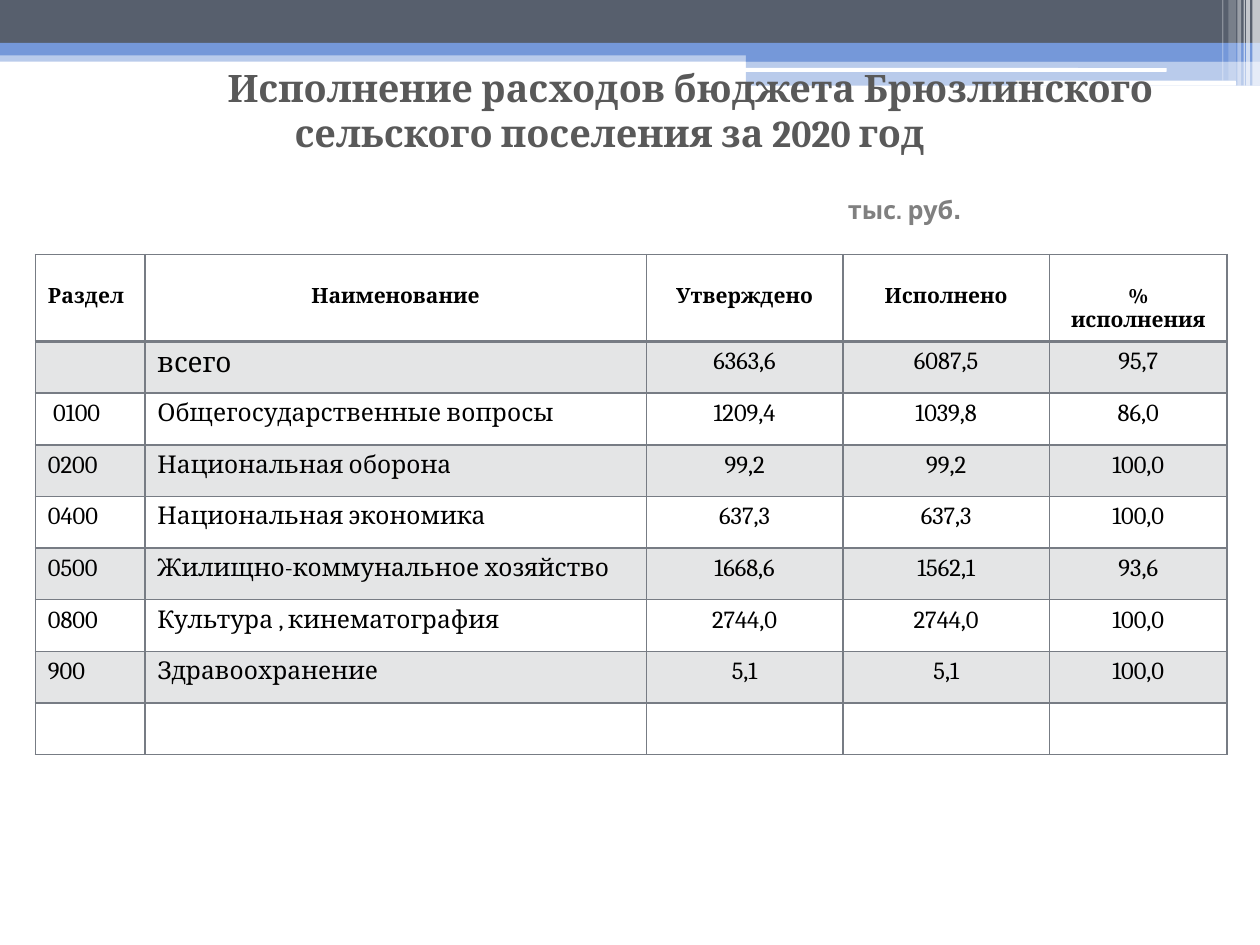
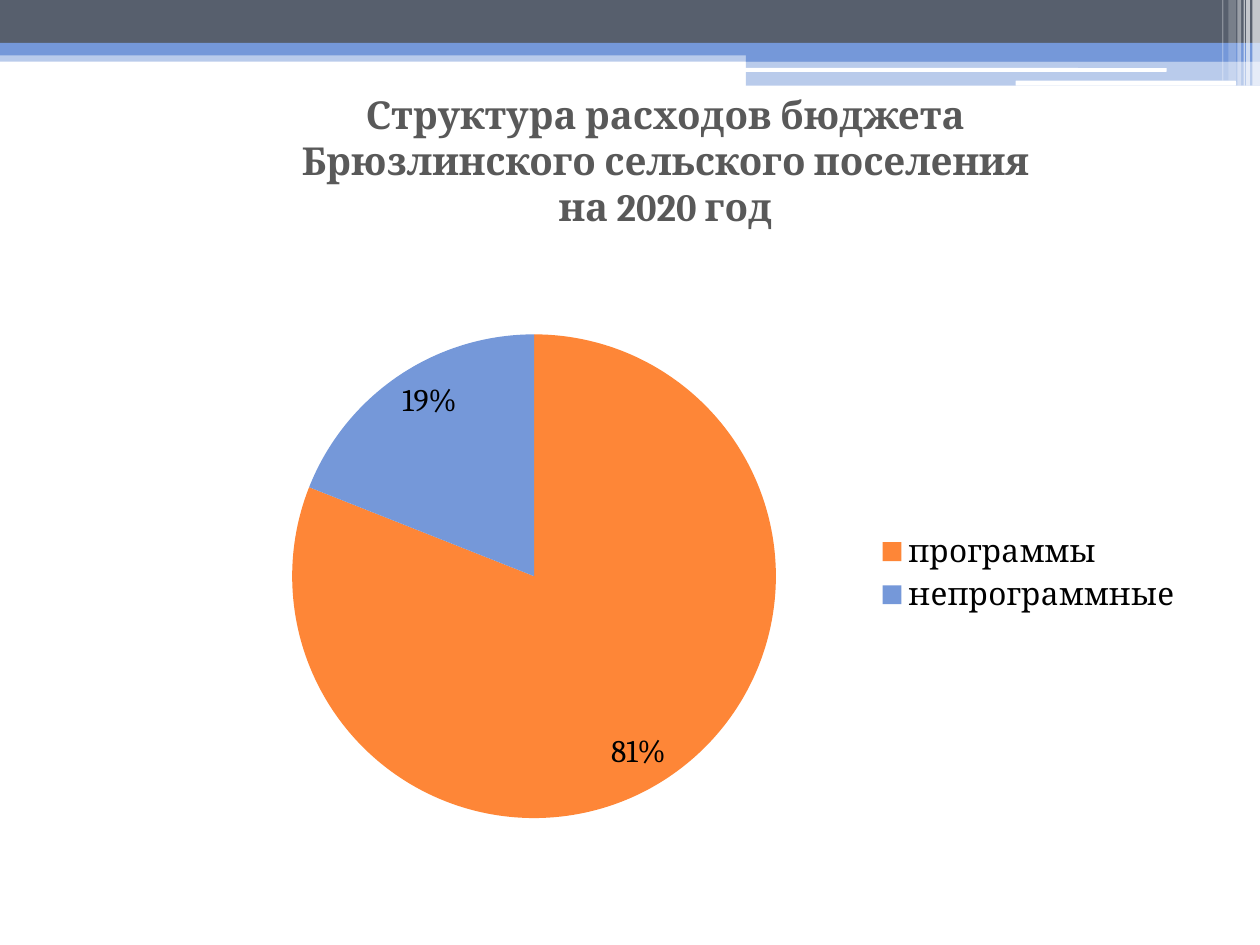
from lxml.etree import SubElement
from pptx import Presentation
from pptx.chart.data import CategoryChartData
from pptx.dml.color import RGBColor
from pptx.enum.chart import XL_CHART_TYPE, XL_LABEL_POSITION, XL_LEGEND_POSITION
from pptx.enum.shapes import MSO_SHAPE
from pptx.enum.text import MSO_ANCHOR, PP_ALIGN
from pptx.oxml import parse_xml
from pptx.oxml.ns import nsdecls, qn
from pptx.util import Inches, Pt

COLORS = {
    "slate": "575F6D", "blue": "7598D9", "white": "FFFFFF", "title": "595959",
    "unit": "808080", "text": "000000", "grid": "777C84", "stripe": "E4E5E6",
    "orange": "FE8637",
}
SERIF, SANS = "Cambria", "Cabin"
TITLE = {"name": SERIF, "bold": True}

BANDS = [
    ((0, 0.4, 10, 0.09), "blue", 50),
    ((0, 0, 10, 0.34), "slate", 100),
    ((0, 0.34, 10, 0.1), "blue", 100),
    ((5.92, 0.39, 4.08, 0.1), "blue", 100),
    ((5.92, 0.48, 4.08, 0.2), "blue", 50),
]
SLOTS = [(5.91, 0.54, 3.35, 0.03), (8.06, 0.64, 1.75, 0.04)]
STRIPES = [
    (9.94, 0.06, 0.68, 65), (9.89, 0.03, 0.68, 65), (9.87, 0.01, 0.68, 60),
    (9.82, 0.03, 0.68, 40), (9.75, 0.06, 0.64, 20), (9.7, 0.01, 0.64, 30),
]

HEADINGS = ["Раздел", "Наименование", "Утверждено", "Исполнено", "% исполнения"]
EXPENSES = [
    ["", "всего", "6363,6", "6087,5", "95,7"],
    [" 0100", "Общегосударственные вопросы", "1209,4", "1039,8", "86,0"],
    ["0200", "Национальная оборона", "99,2", "99,2", "100,0"],
    ["0400", "Национальная экономика", "637,3", "637,3", "100,0"],
    ["0500", "Жилищно-коммунальное хозяйство", "1668,6", "1562,1", "93,6"],
    ["0800", "Культура , кинематография", "2744,0", "2744,0", "100,0"],
    ["900", "Здравоохранение", "5,1", "5,1", "100,0"],
    [""] * 5,
]
COLUMN_WIDTHS = [0.87, 3.98, 1.56, 1.64, 1.41]
HEADER_HEIGHT, ROW_HEIGHT = 0.67, 0.41
SHARES = {"программы": (0.81, "orange"), "непрограммные": (0.19, "blue")}


def rgb(color):
    """Return the named colour."""
    return RGBColor.from_string(COLORS[color])


def style_font(font, color, **values):
    """Set the colour and the given attributes of a font."""
    font.color.rgb = rgb(color)
    for name, value in values.items():
        setattr(font, name, value)


def add_block(page, box, color, opacity=100, kind=MSO_SHAPE.RECTANGLE):
    """Add a flat block without outline."""
    block = page.shapes.add_shape(kind, *map(Inches, box))
    block.shadow.inherit = False
    block.line.fill.background()
    block.fill.solid()
    block.fill.fore_color.rgb = rgb(color)
    if opacity < 100:
        fill_color = block.fill._xPr.find(qn("a:solidFill"))[0]
        SubElement(fill_color, qn("a:alpha"), val=str(opacity * 1000))


def add_top_band(page):
    """Draw the header band shared by all slides."""
    for box, color, opacity in BANDS:
        add_block(page, box, color, opacity)
    for box in SLOTS:
        add_block(page, box, "white", kind=MSO_SHAPE.ROUNDED_RECTANGLE)
    for left, width, height, opacity in STRIPES:
        add_block(page, (left, 0, width, height), "white", opacity)


def add_text_frame(page, box, anchor=MSO_ANCHOR.TOP):
    """Add a wrapping text box without insets and return its frame."""
    frame = page.shapes.add_textbox(*map(Inches, box)).text_frame
    frame.word_wrap = True
    frame.vertical_anchor = anchor
    for side in ("left", "top", "right", "bottom"):
        setattr(frame, f"margin_{side}", 0)
    return frame


def add_title(page, box, lines, size, first_indent=0):
    """Add centred title lines, the first one shifted by an indent."""
    frame = add_text_frame(page, box, MSO_ANCHOR.MIDDLE)
    for index, line in enumerate(lines):
        para = frame.paragraphs[0] if index == 0 else frame.add_paragraph()
        para.alignment = PP_ALIGN.CENTER
        span = para.add_run()
        span.text = line
        style_font(span.font, "title", size=Pt(size), **TITLE)
    if first_indent:
        properties = frame.paragraphs[0]._p.get_or_add_pPr()
        properties.set("marL", str(Inches(first_indent)))
        properties.set("indent", "0")


def add_unit(page, box):
    """Add the unit of measure above the table."""
    para = add_text_frame(page, box).paragraphs[0]
    for text, size in (("тыс. руб", 14.4), (".", 18)):
        span = para.add_run()
        span.text = text
        style_font(span.font, "unit", name=SANS, size=Pt(size), bold=True)


def set_borders(cell, bottom):
    """Outline a cell, with its own weight for the bottom line."""
    properties = cell._tc.get_or_add_tcPr()
    weights = {"lnL": 1, "lnR": 1, "lnT": 1, "lnB": bottom}
    for index, (edge, weight) in enumerate(weights.items()):
        properties.insert(index, parse_xml(
            f'<a:{edge} {nsdecls("a")} w="{Pt(weight)}"><a:solidFill>'
            f'<a:srgbClr val="{COLORS["grid"]}"/></a:solidFill></a:{edge}>'))


def fill_cell(cell, text, row, column):
    """Write and format one table cell."""
    header = row == 0
    cell.fill.solid()
    cell.fill.fore_color.rgb = rgb("stripe" if row % 2 else "white")
    set_borders(cell, 2 if header else 1)
    if header:
        cell.margin_top = Inches(0.24)
    para = cell.text_frame.paragraphs[0]
    if column > 1 or (header and column):
        para.alignment = PP_ALIGN.CENTER
    size = 12 if header else 16 if text == "всего" else 14
    style_font(para.font, "text", size=Pt(size))
    if text:
        span = para.add_run()
        span.text = text
        style_font(span.font, "text", name=SERIF, size=Pt(size), bold=header)


def add_expense_table(page, left, top):
    """Add the table of approved and executed expenses."""
    rows = [HEADINGS, *EXPENSES]
    height = HEADER_HEIGHT + ROW_HEIGHT * len(EXPENSES)
    box = (left, top, sum(COLUMN_WIDTHS), height)
    table = page.shapes.add_table(len(rows), len(HEADINGS), *map(Inches, box)).table
    table.horz_banding = False
    for column, width in zip(table.columns, COLUMN_WIDTHS):
        column.width = Inches(width)
    for row, texts in enumerate(rows):
        table.rows[row].height = Inches(ROW_HEIGHT if row else HEADER_HEIGHT)
        for column, text in enumerate(texts):
            fill_cell(table.cell(row, column), text, row, column)


def set_plot_layout(chart, x, y, w, h):
    """Place the inner plot area by fractions of the chart."""
    area = chart._chartSpace.chart.plotArea
    for old in area.findall(qn("c:layout")):
        area.remove(old)
    parts = '<c:layoutTarget val="inner"/><c:xMode val="edge"/><c:yMode val="edge"/>'
    parts += "".join(f'<c:{name} val="{value}"/>' for name, value in zip("xywh", (x, y, w, h)))
    area.insert(0, parse_xml(
        f'<c:layout {nsdecls("c")}><c:manualLayout>{parts}</c:manualLayout></c:layout>'))


def add_share_pie(page, box):
    """Add the pie of programme and other expenses."""
    data = CategoryChartData(number_format="0%")
    data.categories = list(SHARES)
    data.add_series("Series 1", [share for share, _ in SHARES.values()])
    chart = page.shapes.add_chart(XL_CHART_TYPE.PIE, *map(Inches, box), data).chart
    style_font(chart.font, "text", name=SERIF, size=Pt(18))
    chart.has_title = False
    chart.has_legend = True
    chart.legend.position = XL_LEGEND_POSITION.RIGHT
    chart.legend.include_in_layout = False
    set_plot_layout(chart, 0.13, 0.1, 0.47, 0.81)
    plot = chart.plots[0]
    plot.vary_by_categories = True
    plot.has_data_labels = True
    label_format = {
        "show_value": True, "show_percentage": False, "number_format": "0%",
        "number_format_is_linked": False, "position": XL_LABEL_POSITION.INSIDE_END,
    }
    for name, value in label_format.items():
        setattr(plot.data_labels, name, value)
    for index, (_, color) in enumerate(SHARES.values()):
        fill = plot.series[0].points[index].format.fill
        fill.solid()
        fill.fore_color.rgb = rgb(color)


def add_page(deck):
    """Add a blank slide with the shared band."""
    page = deck.slides.add_slide(deck.slide_layouts[6])
    add_top_band(page)
    return page


def build_execution_page(deck):
    """Build the slide on execution of expenses."""
    page = add_page(deck)
    lines = ["Исполнение расходов бюджета Брюзлинского", "сельского поселения за 2020 год"]
    add_title(page, (0.35, 0.51, 8.98, 0.72), lines, 21.6, first_indent=1.28)
    add_unit(page, (6.73, 1.49, 1.2, 0.35))
    add_expense_table(page, 0.28, 2.02)


def build_structure_page(deck):
    """Build the slide on the structure of expenses."""
    page = add_page(deck)
    lines = ["Структура расходов бюджета", "Брюзлинского сельского поселения", "на 2020 год"]
    add_title(page, (1.02, 0.76, 8.52, 1.02), lines, 22)
    add_share_pie(page, (1.22, 2.18, 8.27, 4.74))


def main():
    """Build and save the deck."""
    deck = Presentation()
    deck.slide_width, deck.slide_height = Inches(10), Inches(7.5)
    build_execution_page(deck)
    build_structure_page(deck)
    deck.save("out.pptx")


if __name__ == "__main__":
    main()
